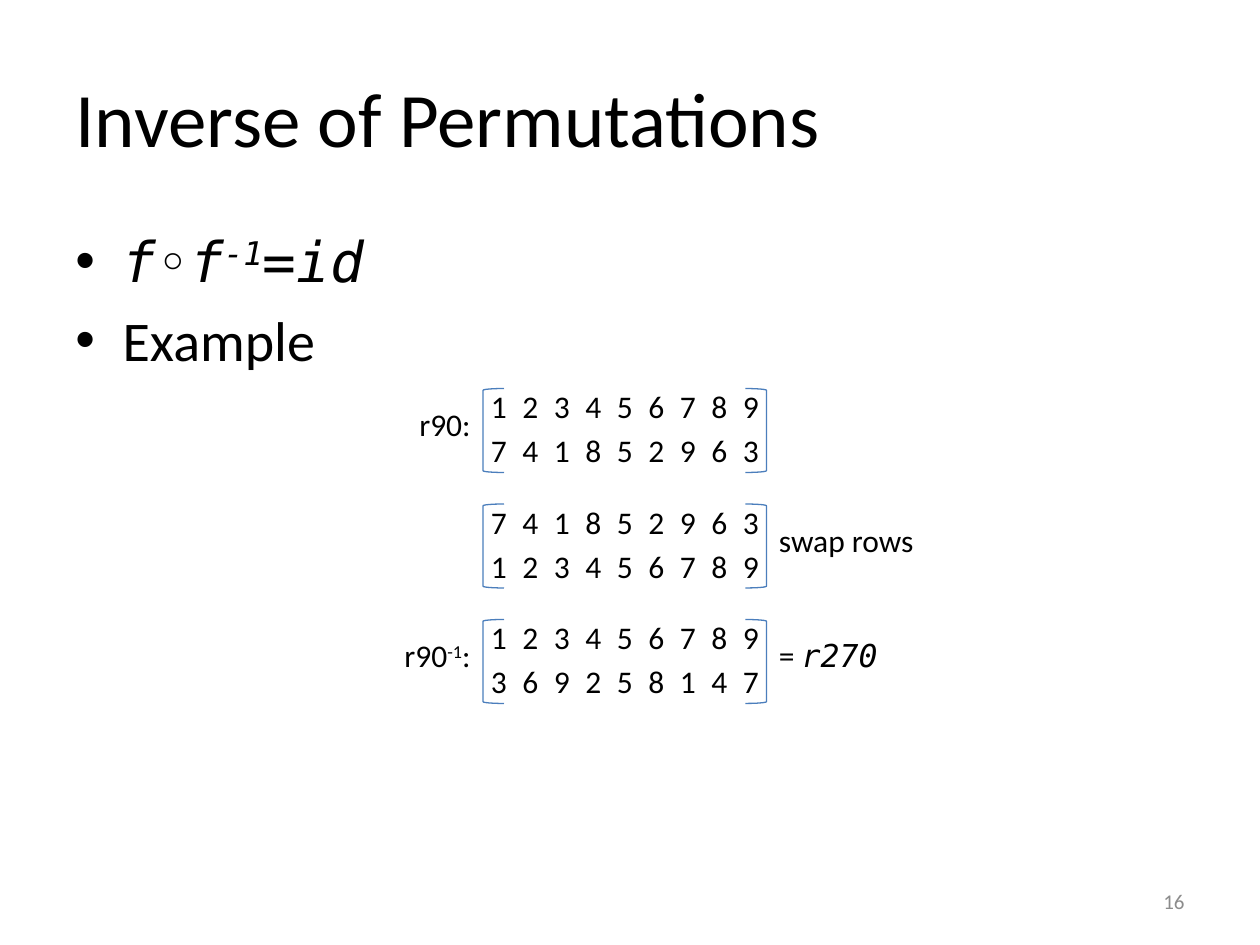
from dataclasses import dataclass

from lxml.etree import SubElement
from pptx import Presentation
from pptx.dml.color import RGBColor
from pptx.enum.shapes import MSO_SHAPE as Shape
from pptx.enum.text import MSO_ANCHOR as Anchor, PP_ALIGN as Align
from pptx.oxml.ns import qn
from pptx.util import Pt


@dataclass(frozen=True)
class Theme:
    text: RGBColor = RGBColor(0x00, 0x00, 0x00)
    muted: RGBColor = RGBColor(0x8C, 0x8C, 0x8C)
    bracket: RGBColor = RGBColor(0x4B, 0x7E, 0xBC)
    sans: str = "Calibri"
    mono: str = "DejaVu Sans Mono"
    title: int = 44
    body: int = 32
    small: int = 18
    footer: int = 12


THEME = Theme()


def add_run(p, text, size, color=THEME.text, math=False, raised=False):
    """Add one run; math runs are italic monospace, raised ones superscript."""
    r = p.add_run()
    r.text = text
    r.font.size = Pt(size)
    r.font.name = THEME.mono if math else THEME.sans
    r.font.italic = math
    r.font.color.rgb = color
    if raised:
        r._r.get_or_add_rPr().set("baseline", "30000")


def add_box(slide, box, align=Align.LEFT, anchor=Anchor.TOP):
    sp = slide.shapes.add_textbox(*map(Pt, box))
    tf = sp.text_frame
    tf.word_wrap = True
    tf.vertical_anchor = anchor
    tf.paragraphs[0].alignment = align
    return tf


def add_title(slide, box, text):
    sp = slide.shapes.title
    sp.left, sp.top, sp.width, sp.height = map(Pt, box)
    tf = sp.text_frame
    tf.vertical_anchor = Anchor.MIDDLE
    p = tf.paragraphs[0]
    p.alignment = Align.LEFT
    add_run(p, text, THEME.title)


def add_bullets(slide, box, items):
    tf = add_box(slide, box)
    for i, runs in enumerate(items):
        p = tf.paragraphs[0] if i == 0 else tf.add_paragraph()
        p.space_before = Pt(6.4)
        pPr = p._p.get_or_add_pPr()
        pPr.set("marL", str(Pt(27)))
        pPr.set("indent", str(Pt(-27)))
        SubElement(pPr, qn("a:buFont")).set("typeface", "Arial")
        SubElement(pPr, qn("a:buChar")).set("char", "•")
        for text, style in runs:
            add_run(p, text, THEME.body, **style)


def add_permutation(slide, box, rows, label=(), remark=()):
    """Two-row matrix in brackets, with a label before and a remark after."""
    left, top, width, height = box
    # Matrix
    table = slide.shapes.add_table(len(rows), len(rows[0]), *map(Pt, box)).table
    table.first_row = table.horz_banding = False
    for col in table.columns:
        col.width = Pt(width / len(rows[0]))
    for i, row in enumerate(rows):
        table.rows[i].height = Pt(height / len(rows))
        for j, value in enumerate(row):
            cell = table.cell(i, j)
            cell.fill.background()
            cell.margin_left = cell.margin_right = 0
            cell.margin_top = cell.margin_bottom = 0
            p = cell.text_frame.paragraphs[0]
            p.alignment = Align.CENTER
            add_run(p, value, THEME.small)
    # Brackets
    for kind, x in ((Shape.LEFT_BRACKET, left),
                    (Shape.RIGHT_BRACKET, left + width - 12)):
        sp = slide.shapes.add_shape(kind, Pt(x), Pt(top), Pt(12), Pt(48))
        sp.shadow.inherit = False
        sp.fill.background()
        sp.line.color.rgb = THEME.bracket
        sp.line.width = Pt(0.75)
    # Side texts
    for runs, x, w, align in ((label, left - 60, 60, Align.RIGHT),
                              (remark, left + width, 108, Align.LEFT)):
        if runs:
            tf = add_box(slide, (x, top + 6, w, 30), align)
            for text, style in runs:
                add_run(tf.paragraphs[0], text, THEME.small, **style)


def add_page_number(slide, box, number):
    tf = add_box(slide, box, Align.RIGHT, Anchor.MIDDLE)
    add_run(tf.paragraphs[0], number, THEME.footer, THEME.muted)


def main():
    prs = Presentation()
    prs.slide_width, prs.slide_height = Pt(720), Pt(540)
    slide = prs.slides.add_slide(prs.slide_layouts.get_by_name("Title Only"))
    plain, math = {}, {"math": True}

    add_title(slide, (36, 21.6, 648, 90), "Inverse of Permutations")
    add_bullets(slide, (36, 126, 648, 356.4), [
        [("f◦f", math), ("-1", {"math": True, "raised": True}), ("=id", math)],
        [("Example", plain)],
    ])

    # Rotation, its rows swapped, then its columns sorted
    identity, r90, r270 = "123456789", "741852963", "369258147"
    steps = [
        ((identity, r90), [("r90:", plain)], []),
        ((r90, identity), [], [("swap rows", plain)]),
        ((identity, r270),
         [("r90", plain), ("-1", {"raised": True}), (":", plain)],
         [("= ", plain), ("r270", math)]),
    ]
    for i, (rows, label, remark) in enumerate(steps):
        add_permutation(slide, (276, 222 + 66 * i, 162, 50.4), rows, label, remark)

    add_page_number(slide, (516, 500.4, 168, 28.8), "16")
    prs.save("out.pptx")


if __name__ == "__main__":
    main()
